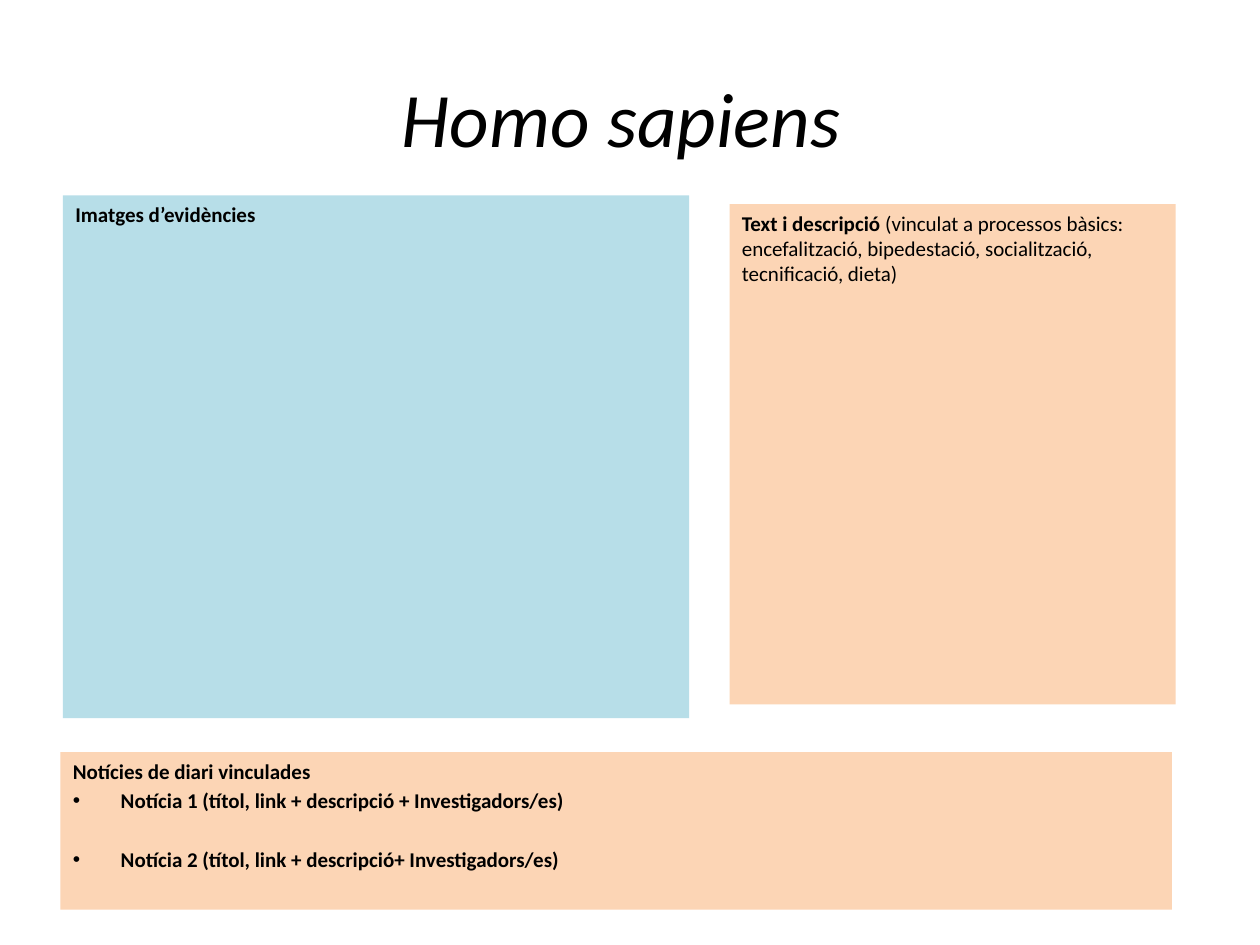
"""Build the Homo sapiens evidence slide."""
from dataclasses import dataclass

import pptx
import pptx.dml.color
import pptx.enum.shapes
import pptx.enum.text
import pptx.oxml
import pptx.oxml.ns
import pptx.util

Inches = pptx.util.Inches
Pt = pptx.util.Pt


@dataclass(frozen=True)
class Theme:
    font: str = "Calibri"
    text: str = "000000"
    blue: str = "B7DEE8"
    peach: str = "FCD5B5"
    title: float = 44
    body: float = 12
    bullet_gap: float = 2.4
    group_gap: float = 19.4


theme = Theme()


def add_text(p, text, size=theme.body, bold=False, italic=False, bullet=False, before=0):
    r = p.add_run()
    r.text = text
    r.font.name = theme.font
    r.font.size = Pt(size)
    r.font.bold = bold
    r.font.italic = italic
    r.font.color.rgb = pptx.dml.color.RGBColor.from_string(theme.text)
    p.space_before = Pt(before)
    if bullet:
        pPr = p._p.get_or_add_pPr()
        pPr.set("marL", str(Inches(0.38)))
        pPr.set("indent", str(-Inches(0.38)))
        ns = pptx.oxml.ns.nsdecls("a")
        pPr.append(pptx.oxml.parse_xml(f'<a:buFont {ns} typeface="Arial"/>'))
        pPr.append(pptx.oxml.parse_xml(f'<a:buChar {ns} char="•"/>'))


prs = pptx.Presentation()
prs.slide_width = Inches(10)
prs.slide_height = Inches(7.5)
s = prs.slides.add_slide(prs.slide_layouts[6])

sp = s.shapes.add_textbox(Inches(0.5), Inches(0.3), Inches(9), Inches(1.25))
tf = sp.text_frame
tf.word_wrap = True
tf.vertical_anchor = pptx.enum.text.MSO_ANCHOR.MIDDLE
p = tf.paragraphs[0]
p.alignment = pptx.enum.text.PP_ALIGN.CENTER
add_text(p, "Homo sapiens ", size=theme.title, italic=True)

panels = [
    ((0.5, 1.55, 4.97, 4.15), theme.blue, "Imatges d’evidències"),
    ((5.79, 1.62, 3.54, 3.97), theme.peach, "Text i descripció "),
    ((0.48, 5.97, 8.82, 1.25), theme.peach, "Notícies de diari vinculades"),
]
frames = []
for box, fill, heading in panels:
    sp = s.shapes.add_shape(pptx.enum.shapes.MSO_SHAPE.RECTANGLE, *map(Inches, box))
    sp.shadow.inherit = False
    sp.fill.solid()
    sp.fill.fore_color.rgb = pptx.dml.color.RGBColor.from_string(fill)
    sp.line.fill.background()
    tf = sp.text_frame
    tf.word_wrap = True
    tf.vertical_anchor = pptx.enum.text.MSO_ANCHOR.TOP
    p = tf.paragraphs[0]
    p.alignment = pptx.enum.text.PP_ALIGN.LEFT
    add_text(p, heading, bold=True)
    frames.append(tf)

evidence, description, news = frames
add_text(
    description.paragraphs[0],
    "(vinculat a processos bàsics: encefalització, bipedestació, socialització, tecnificació, dieta)",
)

for text, before in [
    ("Notícia 1 (títol, link + descripció + Investigadors/es)", theme.bullet_gap),
    ("Notícia 2 (títol, link + descripció+ Investigadors/es)", theme.group_gap),
]:
    p = news.add_paragraph()
    p.alignment = pptx.enum.text.PP_ALIGN.LEFT
    add_text(p, text, bold=True, bullet=True, before=before)

prs.save("out.pptx")
